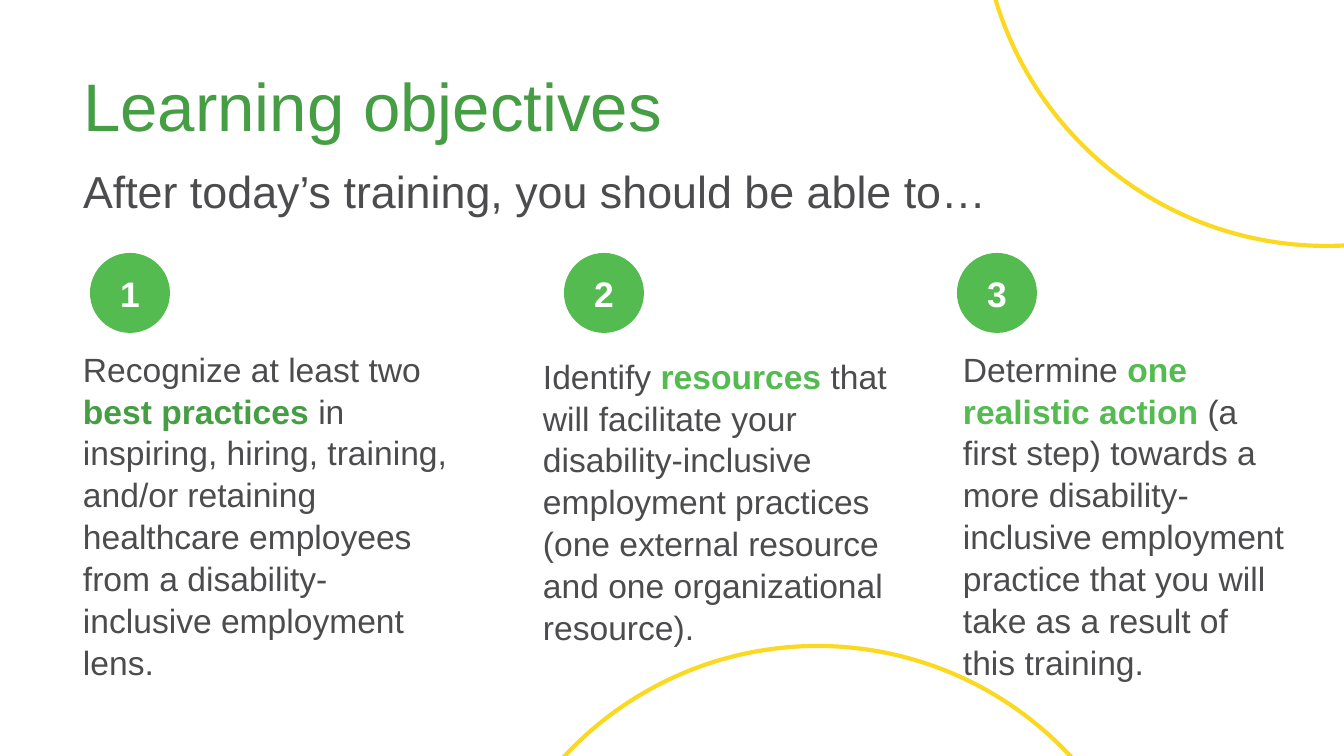
from lxml.etree import SubElement
from pptx import Presentation
from pptx.dml.color import RGBColor
from pptx.enum.shapes import MSO_SHAPE as Shape
from pptx.enum.text import MSO_ANCHOR as Anchor, PP_ALIGN as Align
from pptx.util import Emu, Pt

PX = 914400 / 134.4
GREEN, DARK_GREEN, GRAY = "53BB50", "469E44", "4C4C4E"
YELLOW, WHITE = "FAD920", "FFFFFF"

TITLE = "Learning objectives"
INTRO = "After today’s training, you should be able to…"
OBJECTIVES = [
    dict(badge_x=90, box=(70, 340, 396, 349), accent=DARK_GREEN, parts=(
        "Recognize at least two ", "best practices ",
        "in inspiring, hiring, training, and/or retaining healthcare employees "
        "from a disability-inclusive employment lens.")),
    dict(badge_x=564, box=(530, 347, 376, 362), accent=GREEN, parts=(
        "Identify ", "resources ",
        "that will facilitate your disability-inclusive employment practices "
        "(one external resource and one organizational resource).")),
    dict(badge_x=957, box=(950, 340, 349, 452), accent=GREEN, parts=(
        "Determine ", "one realistic action",
        " (a first step) towards a more disability-inclusive employment practice "
        "that you will take as a result of this training.")),
]
BADGE_Y, BADGE_SIZE = 253, 80
RINGS, RING_SIZE = [(472, 646), (981, -445)], 691


def px(*values):
    return [Emu(round(v * PX)) for v in values]


def rgb(color):
    return RGBColor.from_string(color)


def style(target, **values):
    for name, value in values.items():
        setattr(target, name, value)


def write(tf, runs, size, spacing=1.0, align=Align.LEFT, anchor=Anchor.TOP, inset=(13, 7)):
    x, y = px(*inset)
    style(tf, word_wrap=True, vertical_anchor=anchor, margin_left=x,
          margin_right=x, margin_top=y, margin_bottom=y)
    p = tf.paragraphs[0]
    style(p, alignment=align, line_spacing=spacing, space_before=Pt(0))
    for text, color, bold in runs:
        r = p.add_run()
        r.text = text
        style(r.font, name="Arial", size=Pt(size), bold=bold)
        r.font.color.rgb = rgb(color)


def circle(x, y, size, fill=None, line=None):
    sp = slide.shapes.add_shape(Shape.OVAL, *px(x, y, size, size))
    sp.shadow.inherit = False
    if fill:
        sp.fill.solid()
        sp.fill.fore_color.rgb = rgb(fill)
    else:
        sp.fill.background()
    if line:
        sp.line.color.rgb = rgb(line)
        sp.line.width = Pt(2.25)
    else:
        sp.line.fill.background()
    return sp


prs = Presentation()
prs.slide_width, prs.slide_height = px(1344, 756)
slide = prs.slides.add_slide(prs.slide_layouts[5])

title = slide.shapes.title
style(title, **dict(zip(("left", "top", "width", "height"), px(70, 36, 1159, 147))))
write(title.text_frame, [(TITLE, DARK_GREEN, False)], 36, 0.9, anchor=Anchor.MIDDLE)

for x, y in RINGS:
    circle(x, y, RING_SIZE, line=YELLOW)

intro = slide.shapes.add_textbox(*px(70, 171, 1043, 51))
write(intro.text_frame, [(INTRO, GRAY, False)], 24, 0.7)

for number, item in enumerate(OBJECTIVES, 1):
    badge = circle(item["badge_x"], BADGE_Y, BADGE_SIZE, fill=GREEN)
    write(badge.text_frame, [(str(number), WHITE, True)], 19,
          align=Align.CENTER, anchor=Anchor.MIDDLE, inset=(0, 0))
    before, key, after = item["parts"]
    sp = slide.shapes.add_textbox(*px(*item["box"]))
    write(sp.text_frame, [(before, GRAY, False), (key, item["accent"], True),
                          (after, GRAY, False)], 18, 1.04)

prs.save("out.pptx")
